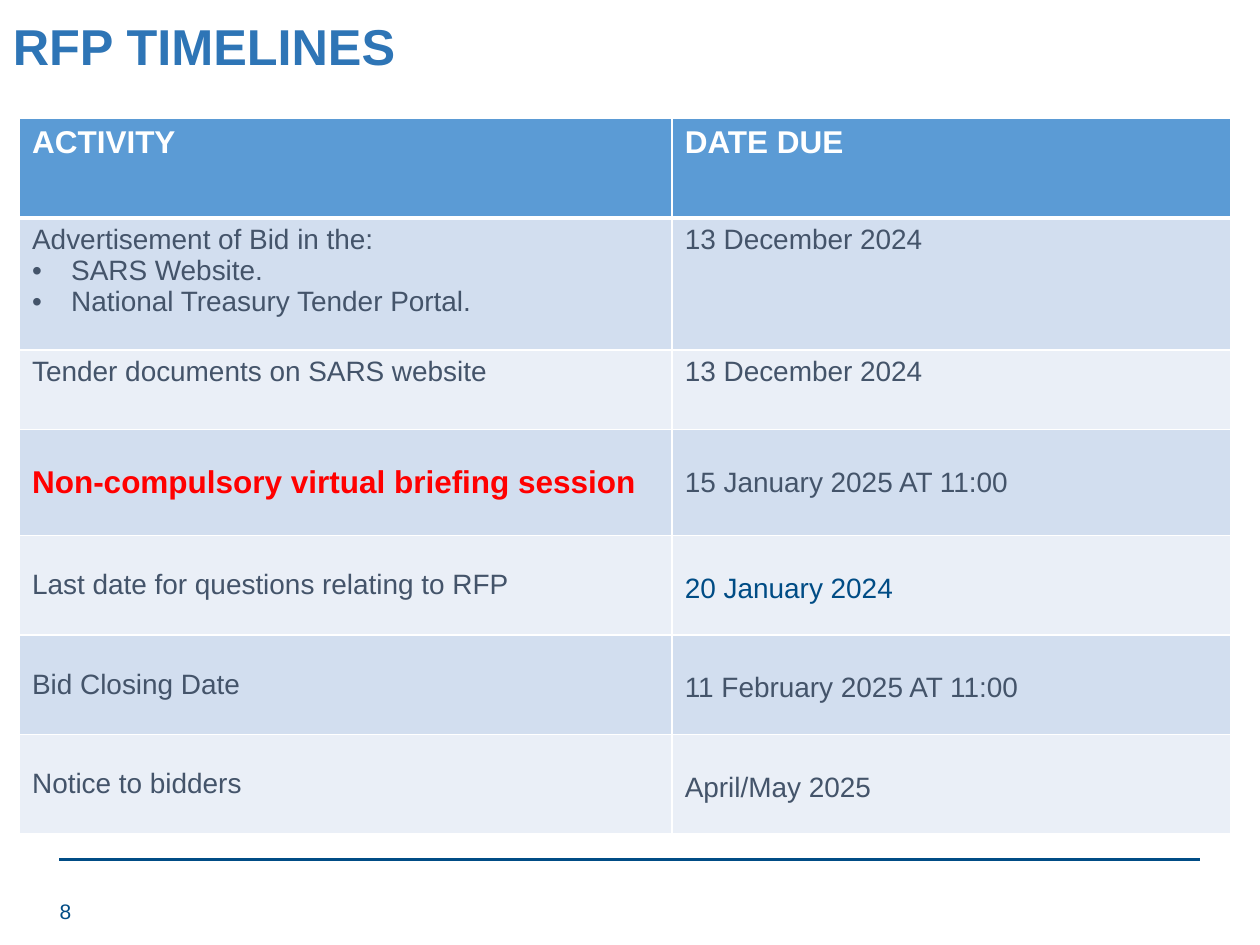
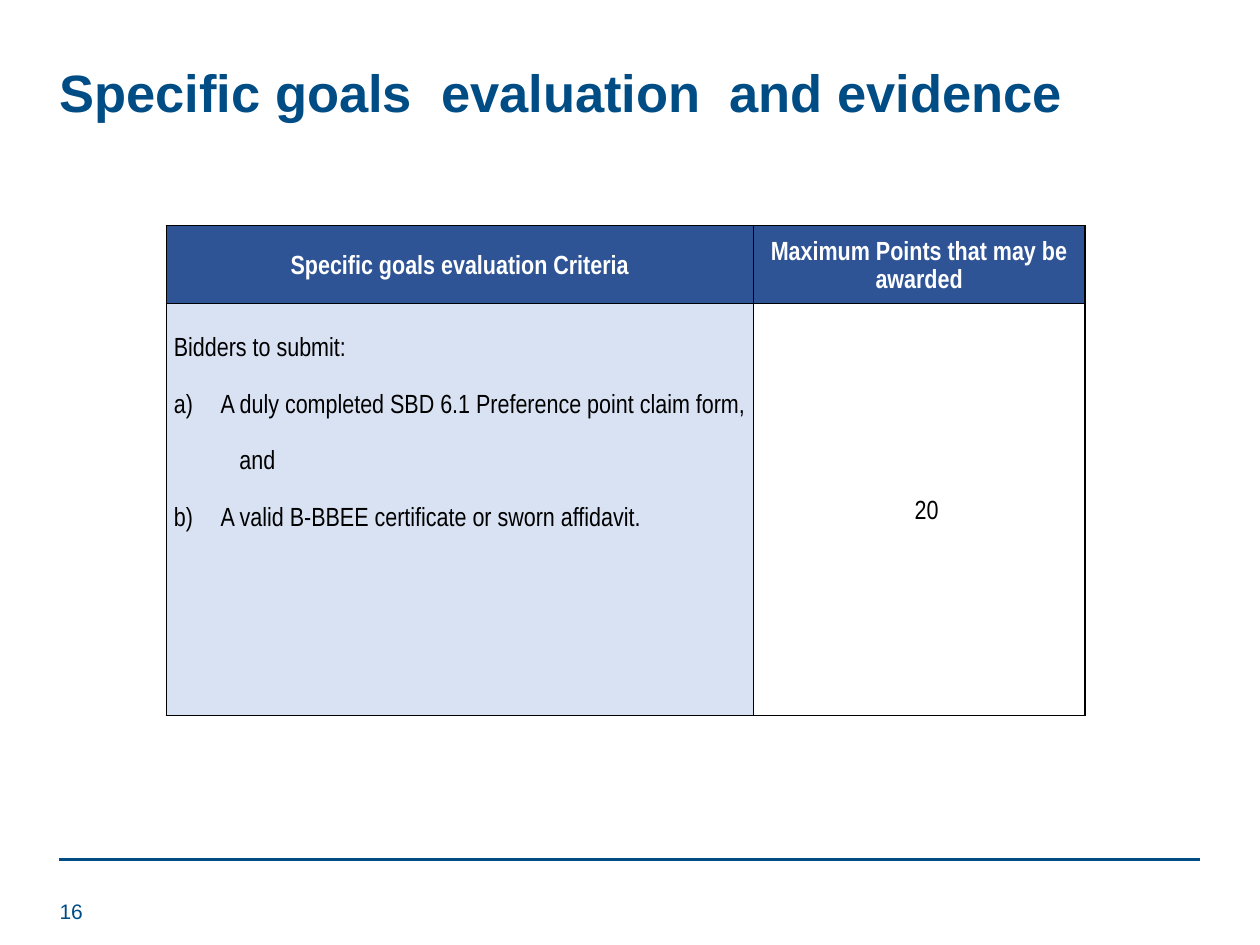
from lxml import etree
from pptx import Presentation
from pptx import util as u
from pptx.dml.color import RGBColor
from pptx.enum import shapes, text
from pptx.oxml import ns

COLORS = {
    "navy": "004C85", "title": "2E75B6", "white": "FFFFFF", "black": "000000",
    "slate": "44546A", "red": "FF0000", "header": "5B9BD5", "band": "D2DEEF",
    "pale": "EAEFF7", "criteria": "2F5496", "evidence": "D9E2F3",
}
TOP, MIDDLE = text.MSO_ANCHOR.TOP, text.MSO_ANCHOR.MIDDLE
CENTER, JUSTIFY = text.PP_ALIGN.CENTER, text.PP_ALIGN.JUSTIFY
TITLE_SIZE = (86.2, 7.73)
WIDE, TIGHT = (0.1, 0.05, 0.1, 0.05), (0.06, 0.03, 0.06, 0.01)

deck = Presentation()
deck.slide_width, deck.slide_height = u.Inches(10), u.Inches(7.5)


def across(percent):
    return int(deck.slide_width * percent / 100)


def down(percent):
    return int(deck.slide_height * percent / 100)


def place(box):
    left, top, width, height = box
    return across(left), down(top), across(width), down(height)


def split(total, weights):
    return [int(total * weight / sum(weights)) for weight in weights]


def rgb(name):
    return RGBColor.from_string(COLORS[name])


def add_child(parent, tag, **attributes):
    return etree.SubElement(parent, ns.qn(tag), attributes)


def write(frame, words, first=True, size=16, color="slate", bold=False, font="Arial",
          align=None, spacing=None, before=0, indent=0, hanging=0, bullet=None, number=None):
    para = frame.paragraphs[0] if first else frame.add_paragraph()
    settings = para._p.get_or_add_pPr()
    if indent or hanging:
        settings.set("marL", str(u.Inches(indent + hanging)))
        settings.set("indent", str(-u.Inches(hanging)))
    if bullet:
        add_child(settings, "a:buFont", typeface="Arial")
        add_child(settings, "a:buChar", char=bullet)
    if number:
        add_child(settings, "a:buAutoNum", type="alphaLcParenR", startAt=str(number))
    if align:
        para.alignment = align
    if spacing:
        para.line_spacing = spacing
    if before:
        para.space_before = u.Pt(before)
    span = para.add_run()
    span.text = words
    span.font.size, span.font.bold, span.font.name = u.Pt(size), bold, font
    span.font.color.rgb = rgb(color)


def add_text(page, box, words, anchor=TOP, **look):
    frame = page.shapes.add_textbox(*place(box)).text_frame
    frame.word_wrap = True
    frame.vertical_anchor = anchor
    write(frame, words, **look)


def add_footer(page, number):
    rule = page.shapes.add_connector(shapes.MSO_CONNECTOR.STRAIGHT, across(4.7), down(90.93),
                                     across(95.25), down(90.93))
    rule.line.color.rgb, rule.line.width = rgb("navy"), u.Pt(2)
    add_child(rule._element.spPr, "a:effectLst")
    add_text(page, (3.74, 93.73, 22.5, 5.33), number, MIDDLE, size=12, color="navy")


def add_page(title, corner, number, **look):
    page = deck.slides.add_slide(deck.slide_layouts[6])
    add_footer(page, number)
    add_text(page, corner + TITLE_SIZE, title, bold=True, spacing=0.9, **look)
    return page


def add_grid(page, box, columns, rows):
    left, top, width, height = place(box)
    frame = page.shapes.add_table(len(rows), len(columns), left, top, width, height)
    table = frame.table
    table.first_row = table.horz_banding = False
    for column, size in zip(table.columns, split(width, columns)):
        column.width = size
    for row, size in zip(table.rows, split(height, rows)):
        row.height = size
    return table


def fill_cell(cell, paragraphs, fill, border, anchor=TOP, insets=WIDE, heavy=None, **look):
    settings = cell._tc.get_or_add_tcPr()
    for side in "LRTB":
        width = u.Pt(3 if side == heavy else 1)
        line = add_child(settings, "a:ln" + side, w=str(width))
        add_child(add_child(line, "a:solidFill"), "a:srgbClr", val=COLORS[border])
    if fill:
        cell.fill.solid()
        cell.fill.fore_color.rgb = rgb(fill)
    else:
        cell.fill.background()
    cell.vertical_anchor = anchor
    (cell.margin_left, cell.margin_top,
     cell.margin_right, cell.margin_bottom) = map(u.Inches, insets)
    for index, (words, changes) in enumerate(paragraphs):
        write(cell.text_frame, words, first=index == 0, **{**look, **changes})


def build_timelines(page, box):
    point = {"bullet": "•", "hanging": 0.31}
    alert = {"size": 18, "color": "red", "bold": True}
    lowered = (0.1, 0.3, 0.1, 0.05)
    activities = [
        ([("Advertisement of Bid in the:", {}), ("SARS Website.", point),
          ("National Treasury Tender Portal.", point)], TOP, "13 December 2024", {}),
        ([("Tender documents on SARS website", {})], TOP, "13 December 2024", {}),
        ([("Non-compulsory virtual briefing session", alert)], MIDDLE,
         "15 January 2025 AT 11:00", {}),
        ([("Last date for questions relating to RFP", {})], MIDDLE,
         "20 January 2024", {"color": "navy"}),
        ([("Bid Closing Date", {})], MIDDLE, "11 February 2025 AT 11:00", {}),
        ([("Notice to bidders", {})], MIDDLE, "April/May 2025", {}),
    ]
    table = add_grid(page, box, (518, 443), (79, 105, 63, 84, 79, 79, 79))
    for column, heading in enumerate(("ACTIVITY", "DATE DUE")):
        fill_cell(table.cell(0, column), [(heading, {})], "header", "white", heavy="B",
                  size=18, color="white", bold=True)
    for row, (activity, anchor, due, look) in enumerate(activities, 1):
        fill = "band" if row % 2 else "pale"
        heavy = "T" if row == 1 else None
        fill_cell(table.cell(row, 0), activity, fill, "white", anchor, heavy=heavy)
        fill_cell(table.cell(row, 1), [(due, look)], fill, "white", heavy=heavy,
                  insets=lowered if anchor == MIDDLE else WIDE)


def build_goals(page, box):
    narrow = {"size": 15, "font": "Arial Narrow", "spacing": 1.15}
    item = {"before": 16.2, "align": JUSTIFY}
    evidence = [
        ("Bidders to submit:", {}),
        ("A duly completed SBD 6.1 Preference point claim form,",
         {**item, "hanging": 0.37, "number": 1}),
        ("and", {**item, "indent": 0.52}),
        ("A valid B-BBEE certificate or sworn affidavit.",
         {**item, "hanging": 0.37, "number": 2}),
    ]
    headings = ("Specific goals evaluation Criteria", "Maximum Points that may be awarded")
    table = add_grid(page, box, (466, 263), (62, 327))
    for column, heading in enumerate(headings):
        fill_cell(table.cell(0, column), [(heading, {})], "criteria", "black", MIDDLE, TIGHT,
                  color="white", bold=True, align=CENTER, **narrow)
    fill_cell(table.cell(1, 0), evidence, "evidence", "black", insets=(0.06, 0.24, 0.03, 0.03),
              color="black", **narrow)
    fill_cell(table.cell(1, 1), [("20", {"indent": 0.12})], None, "black", MIDDLE, TIGHT,
              color="black", align=CENTER, **narrow)


def main():
    timelines = add_page("RFP TIMELINES", (0.04, 1.65), "8", size=28.8, color="title")
    build_timelines(timelines, (1.55, 12.53, 96.1, 75.73))
    goals = add_page("Specific goals  evaluation  and evidence", (3.74, 6.4), "16",
                     size=30, color="navy")
    build_goals(goals, (13.2, 23.87, 72.9, 51.87))
    deck.save("out.pptx")


if __name__ == "__main__":
    main()
